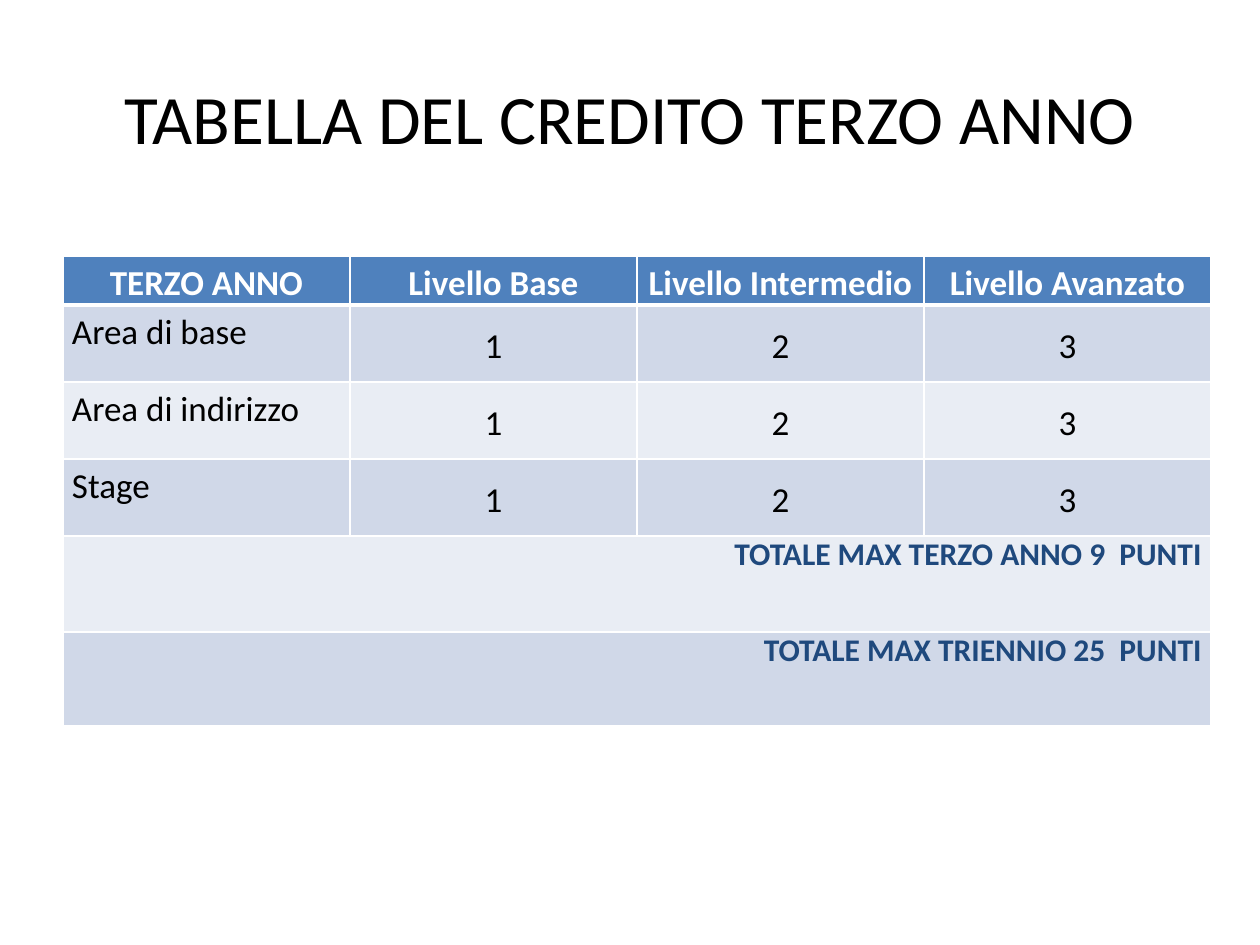
from lxml.etree import SubElement
from pptx import Presentation
from pptx.dml.color import RGBColor
from pptx.enum.text import MSO_ANCHOR as Anchor, PP_ALIGN as Align
from pptx.oxml.ns import qn
from pptx.util import Pt

EMU_PER_PX = 914400 / 126
FONT = "Calibri"
BLACK = RGBColor(0x00, 0x00, 0x00)
WHITE = RGBColor(0xFF, 0xFF, 0xFF)
NAVY = RGBColor(0x1F, 0x49, 0x7D)
BLUE = RGBColor(0x4F, 0x81, 0xBD)
BANDS = (RGBColor(0xD0, 0xD8, 0xE8), RGBColor(0xE9, 0xED, 0xF4))

HEADINGS = ("TERZO ANNO", "Livello Base", "Livello Intermedio", "Livello Avanzato")
AREAS = ("Area di base", "Area di indirizzo", "Stage")
TOTALS = ("TOTALE MAX TERZO ANNO 9  PUNTI", "TOTALE MAX TRIENNIO 25  PUNTI")
COLUMN_WIDTH = 287
ROW_HEIGHTS = (49, 77, 77, 77, 96, 94)


def px(length):
    return round(length * EMU_PER_PX)


def write(frame, text, size=20, color=BLACK, bold=False, align=Align.LEFT, spacing=None):
    frame.word_wrap = True
    para = frame.paragraphs[0]
    para.alignment = align
    para.line_spacing = spacing
    span = para.add_run()
    span.text = text
    span.font.name = FONT
    span.font.size = Pt(size)
    span.font.bold = bold
    span.font.color.rgb = color


def add_title(page, text):
    box = page.shapes.add_textbox(px(63), px(38), px(1134), px(157))
    box.text_frame.vertical_anchor = Anchor.MIDDLE
    write(box.text_frame, text, size=39.6, align=Align.CENTER)


def add_borders(cell, bottom):
    properties = cell._tc.get_or_add_tcPr()
    for side, width in (("L", 1), ("R", 1), ("T", 1), ("B", bottom)):
        line = SubElement(properties, qn(f"a:ln{side}"), w=str(Pt(width)))
        fill = SubElement(line, qn("a:solidFill"))
        SubElement(fill, qn("a:srgbClr"), val=str(WHITE))


def style_cell(cell, color, bottom=1):
    cell.margin_left = cell.margin_right = px(9)
    cell.margin_top = cell.margin_bottom = 0
    add_borders(cell, bottom)
    cell.fill.solid()
    cell.fill.fore_color.rgb = color


def add_credit_table(page):
    rows, columns = len(ROW_HEIGHTS), len(HEADINGS)
    table = page.shapes.add_table(
        rows, columns, px(63), px(256), px(COLUMN_WIDTH * columns), px(sum(ROW_HEIGHTS))
    ).table
    for column in table.columns:
        column.width = px(COLUMN_WIDTH)
    for index, (row, height) in enumerate(zip(table.rows, ROW_HEIGHTS)):
        row.height = px(height)
        for cell in row.cells:
            if index == 0:
                style_cell(cell, BLUE, bottom=3)
            else:
                style_cell(cell, BANDS[(index - 1) % 2])
    return table


def fill_headings(table):
    for column, heading in enumerate(HEADINGS):
        write(table.cell(0, column).text_frame, heading, color=WHITE, bold=True,
              align=Align.CENTER, spacing=1.15)


def fill_areas(table):
    for row, area in enumerate(AREAS, 1):
        write(table.cell(row, 0).text_frame, area, spacing=1.15)
        for points in range(1, len(HEADINGS)):
            cell = table.cell(row, points)
            cell.vertical_anchor = Anchor.MIDDLE
            write(cell.text_frame, str(points), align=Align.CENTER, spacing=1.15)


def fill_totals(table):
    for row, total in enumerate(TOTALS, len(AREAS) + 1):
        cell = table.cell(row, 0)
        cell.merge(table.cell(row, len(HEADINGS) - 1))
        write(cell.text_frame, total, size=18, color=NAVY, bold=True, align=Align.RIGHT)


def main():
    deck = Presentation()
    deck.slide_width, deck.slide_height = px(1260), px(945)
    page = deck.slides.add_slide(deck.slide_layouts[6])
    add_title(page, "TABELLA DEL CREDITO TERZO ANNO")
    table = add_credit_table(page)
    fill_headings(table)
    fill_areas(table)
    fill_totals(table)
    deck.save("out.pptx")


if __name__ == "__main__":
    main()
